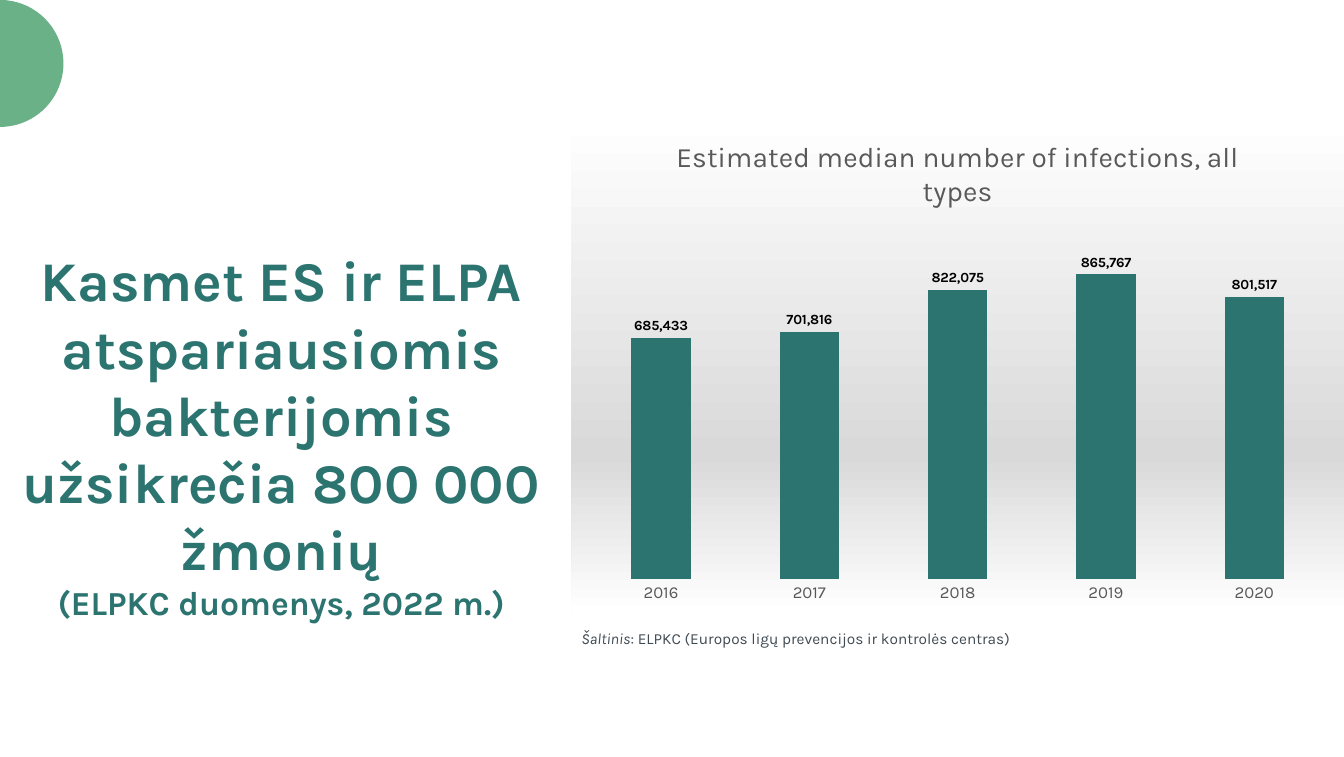
import math

import pptx
import pptx.chart.data
import pptx.dml.color
import pptx.enum.chart
import pptx.enum.text
import pptx.oxml
import pptx.oxml.ns
import pptx.util
from pptx.util import Cm

TEAL, GREEN, GREY, SLATE = "2C7470", "6BB188", "595959", "3F4A52"


def colour(value):
    return pptx.dml.color.RGBColor.from_string(value)


class SlideBuilder:
    face = "Karla"

    def __init__(self, slide):
        self.slide = slide

    def style(self, font, size, shade, bold=False, italic=False):
        font.name, font.size = self.face, pptx.util.Pt(size)
        font.bold, font.italic = bold, italic
        font.color.rgb = colour(shade)

    def add_paragraphs(self, frame, paragraphs, align):
        """Each paragraph is a list of (text, size, shade, bold, italic)."""
        frame.word_wrap = True
        frame.auto_size = pptx.enum.text.MSO_AUTO_SIZE.NONE
        frame.vertical_anchor = pptx.enum.text.MSO_ANCHOR.TOP
        for index, spans in enumerate(paragraphs):
            para = frame.add_paragraph() if index else frame.paragraphs[0]
            para.alignment, para.line_spacing = align, 1.0
            for text, *look in spans:
                span = para.add_run()
                span.text = text
                self.style(span.font, *look)

    def title(self, left, top, width, height, paragraphs):
        box = self.slide.shapes.title
        box.left, box.top, box.width, box.height = left, top, width, height
        self.add_paragraphs(box.text_frame, paragraphs,
                            pptx.enum.text.PP_ALIGN.CENTER)

    def text(self, left, top, width, height, paragraphs):
        box = self.slide.shapes.add_textbox(left, top, width, height)
        self.add_paragraphs(box.text_frame, paragraphs,
                            pptx.enum.text.PP_ALIGN.LEFT)

    def half_disc(self, radius, shade, steps=90):
        angles = [math.pi * step / steps for step in range(steps + 1)]
        points = [(round(radius * math.sin(angle)),
                   round(radius * (1 - math.cos(angle)))) for angle in angles]
        outline = self.slide.shapes.build_freeform(*points[0])
        outline.add_line_segments(points[1:], close=True)
        shape = outline.convert_to_shape()
        shape.shadow.inherit = False
        shape.fill.solid()
        shape.fill.fore_color.rgb = colour(shade)
        shape.line.fill.background()

    def column_chart(self, left, top, width, height, title, categories, values):
        data = pptx.chart.data.CategoryChartData(number_format="#,##0")
        data.categories = categories
        data.add_series("Series 1", values)
        chart = self.slide.shapes.add_chart(
            pptx.enum.chart.XL_CHART_TYPE.COLUMN_CLUSTERED,
            left, top, width, height, data).chart
        self.style(chart.font, 10, "000000")
        chart.has_legend = False

        # Chart title
        chart.has_title = True
        chart.chart_title.include_in_layout = False
        span = chart.chart_title.text_frame.paragraphs[0].add_run()
        span.text = title
        self.style(span.font, 20, GREY)

        # Axes
        axis = chart.category_axis
        axis.major_tick_mark = pptx.enum.chart.XL_TICK_MARK.NONE
        axis.format.line.fill.background()
        self.style(axis.tick_labels.font, 12, GREY)
        scale = chart.value_axis
        scale.minimum_scale, scale.maximum_scale = 0, 1000000
        scale.has_major_gridlines = False
        scale.visible = False

        # Columns and their labels
        plot = chart.plots[0]
        plot.gap_width, plot.overlap = 150, -25
        plot.vary_by_categories = False
        series = plot.series[0]
        series.format.fill.solid()
        series.format.fill.fore_color.rgb = colour(TEAL)
        labels = series.data_labels
        labels.show_value = True
        labels.number_format, labels.number_format_is_linked = "#,##0", False
        labels.position = pptx.enum.chart.XL_LABEL_POSITION.OUTSIDE_END
        self.style(labels.font, 10, "000000", bold=True)
        return chart

    def place_plot(self, chart, **fractions):
        area = chart.plots[0]._element.getparent()
        for old in area.findall(pptx.oxml.ns.qn("c:layout")):
            area.remove(old)
        sizes = "".join(f'<c:{name} val="{value}"/>'
                        for name, value in fractions.items())
        area.insert(0, pptx.oxml.parse_xml(
            f'<c:layout {pptx.oxml.ns.nsdecls("c")}><c:manualLayout>'
            '<c:layoutTarget val="inner"/><c:xMode val="edge"/>'
            f'<c:yMode val="edge"/>{sizes}</c:manualLayout></c:layout>'))

    def chart_gradient(self, chart, stops):
        marks = "".join(f'<a:gs pos="{place * 1000}"><a:srgbClr val="{shade}"/></a:gs>'
                        for place, shade in stops)
        body = chart._chartSpace.find(pptx.oxml.ns.qn("c:chart"))
        body.addnext(pptx.oxml.parse_xml(
            f'<c:spPr {pptx.oxml.ns.nsdecls("c", "a")}><a:gradFill>'
            f'<a:gsLst>{marks}</a:gsLst><a:lin ang="5400000" scaled="0"/>'
            '</a:gradFill><a:ln><a:noFill/></a:ln></c:spPr>'))


def main():
    deck = pptx.Presentation()
    deck.slide_width, deck.slide_height = Cm(33.87), Cm(19.08)
    page = SlideBuilder(deck.slides.add_slide(deck.slide_layouts[5]))

    # Corner decoration
    page.half_disc(Cm(1.6), GREEN)

    # Headline
    page.title(Cm(0.2), Cm(6.07), Cm(13.77), Cm(9.83), [
        [("Kasmet ES ir ELPA atspariausiomis bakterijomis "
          "užsikrečia 800 000 žmonių", 40, TEAL, True)],
        [("(ELPKC duomenys, 2022 m.)", 24, TEAL, True)],
    ])

    # Infections by year
    chart = page.column_chart(
        Cm(14.4), Cm(2.97), Cm(19.47), Cm(12.5),
        "Estimated median number of infections, all types",
        ["2016", "2017", "2018", "2019", "2020"],
        [685433, 701816, 822075, 865767, 801517])
    page.place_plot(chart, x=0.02, y=0.22, w=0.96, h=0.71)
    page.chart_gradient(chart, [(0, "FFFFFF"), (68, "D9D9D9"), (100, "FFFFFF")])

    # Source line
    page.text(Cm(14.4), Cm(15.72), Cm(16.94), Cm(0.74), [
        [("Šaltinis", 11, SLATE, False, True),
         (": ELPKC (Europos ligų prevencijos ir kontrolės centras)", 11, SLATE)],
    ])

    deck.save("out.pptx")


if __name__ == "__main__":
    main()
